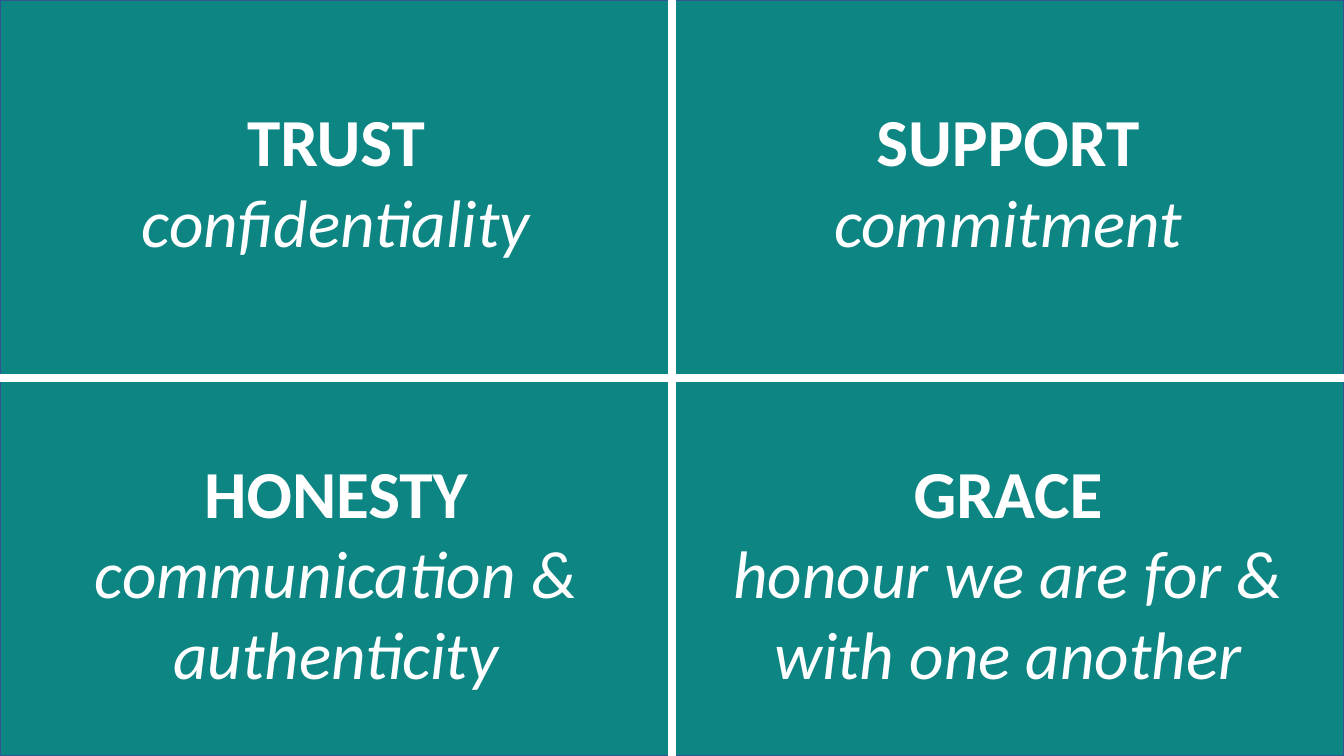
from dataclasses import dataclass

from lxml import etree
from pptx import Presentation
from pptx import util as u
from pptx.dml.color import RGBColor
from pptx.enum import shapes, text
from pptx.oxml.ns import qn


@dataclass(frozen=True)
class Theme:
    """Colours, font and sizes of the slide."""
    teal: str = "0D8583"
    border: str = "325491"
    white: str = "FFFFFF"
    font: str = "Calibri"
    size: int = 48
    border_width: int = 1
    divider_width: int = 6


THEME = Theme()
WIDTH, HEIGHT = u.Inches(13.33), u.Inches(7.5)
COLUMNS = 2
ROWS = [
    (0.125, 0.23, [("TRUST", "confidentiality"), ("SUPPORT", "commitment")]),
    (0.59, 0.336, [("HONESTY", "communication & authenticity"),
                   ("GRACE", "honour we are for & with one another")]),
]


def share(x, y):
    """Turn shares of the slide's width and height into lengths."""
    return int(x * WIDTH), int(y * HEIGHT)


def add_background(slide):
    """Cover the slide with a bordered teal panel."""
    sp = slide.shapes.add_shape(shapes.MSO_SHAPE.RECTANGLE, 0, 0, WIDTH, HEIGHT)
    sp.shadow.inherit = False
    sp.fill.solid()
    sp.fill.fore_color.rgb = RGBColor.from_string(THEME.teal)
    sp.line.color.rgb = RGBColor.from_string(THEME.border)
    sp.line.width = u.Pt(THEME.border_width)


def add_divider(slide, start, end):
    """Draw a white line between two points given as shares."""
    line = slide.shapes.add_connector(
        shapes.MSO_CONNECTOR.STRAIGHT, *share(*start), *share(*end))
    line.line.color.rgb = RGBColor.from_string(THEME.white)
    line.line.width = u.Pt(THEME.divider_width)
    etree.SubElement(line._element.spPr, qn("a:effectLst"))


def write(p, words, bold=False, italic=False):
    """Write centred words into a paragraph."""
    p.alignment = text.PP_ALIGN.CENTER
    r = p.add_run()
    r.text = words
    r.font.name = THEME.font
    r.font.size = u.Pt(THEME.size)
    r.font.bold, r.font.italic = bold, italic
    r.font.color.rgb = RGBColor.from_string(THEME.white)


def add_value(slide, column, top, height, name, meaning):
    """Place a value and its meaning in one column."""
    sp = slide.shapes.add_textbox(
        *share(column / COLUMNS, top), *share(1 / COLUMNS, height))
    tf = sp.text_frame
    tf.word_wrap = True
    tf.auto_size = text.MSO_AUTO_SIZE.SHAPE_TO_FIT_TEXT
    write(tf.paragraphs[0], name, bold=True)
    write(tf.add_paragraph(), meaning, italic=True)


def main():
    """Build the four values slide and save it."""
    prs = Presentation()
    prs.slide_width, prs.slide_height = WIDTH, HEIGHT
    slide = prs.slides.add_slide(prs.slide_layouts[6])
    add_background(slide)
    add_divider(slide, (0.5, 0), (0.5, 1))
    add_divider(slide, (0, 0.5), (1, 0.5))
    for top, height, values in ROWS:
        for column, (name, meaning) in enumerate(values):
            add_value(slide, column, top, height, name, meaning)
    prs.save("out.pptx")


if __name__ == "__main__":
    main()
